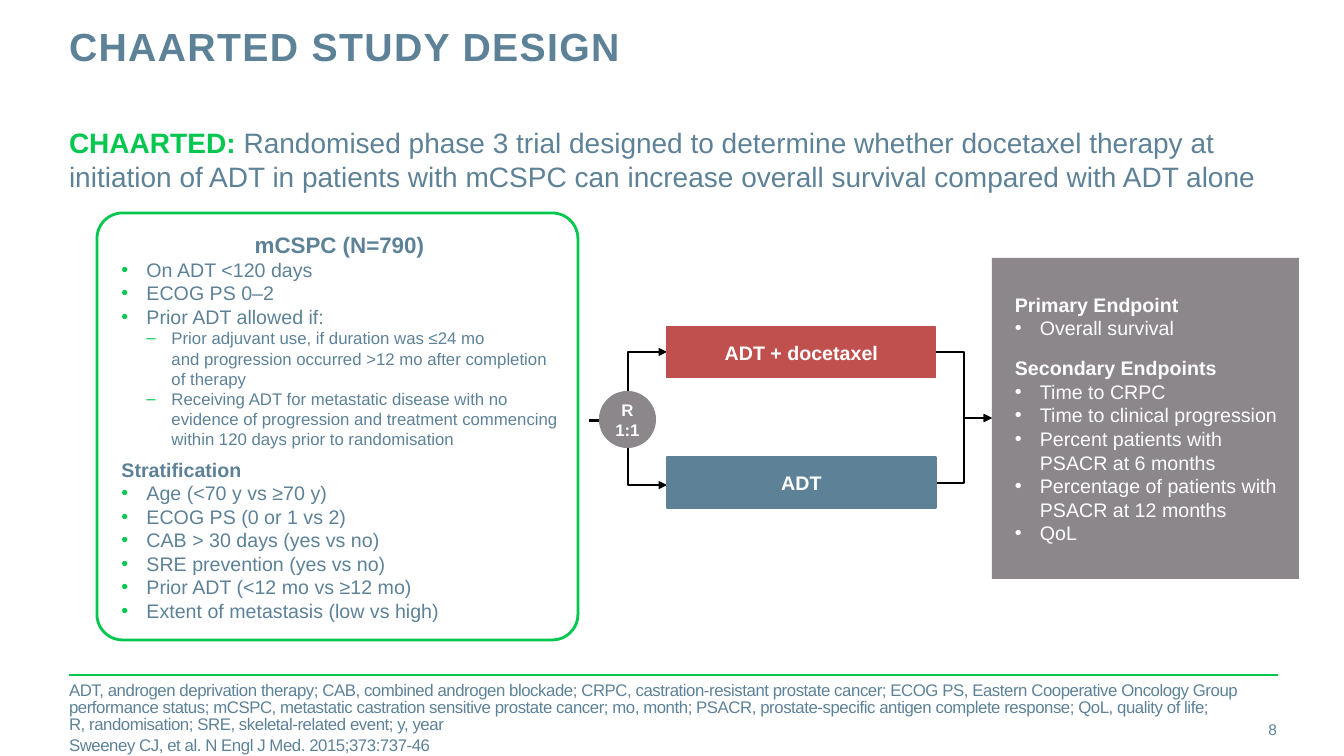
from lxml.etree import SubElement
from pptx import Presentation
from pptx.dml.color import RGBColor
from pptx.enum.shapes import MSO_CONNECTOR as LINK, MSO_SHAPE as SHAPE
from pptx.enum.text import MSO_ANCHOR as ANCHOR, PP_ALIGN as ALIGN
from pptx.oxml.ns import qn
from pptx.util import Emu, Pt

SCALE = 914400 / 100.8  # EMU per px
BLUE = RGBColor(0x5D, 0x82, 0x98)
GREEN = RGBColor(0x03, 0xC7, 0x4F)
RED = RGBColor(0xC0, 0x50, 0x4D)
GRAY = RGBColor(0x8B, 0x87, 0x8B)
WHITE = RGBColor(0xFF, 0xFF, 0xFF)
BLACK = RGBColor(0, 0, 0)


def px(*lengths):
    return [Emu(round(length * SCALE)) for length in lengths]


def write(frame, text, size=14, color=BLUE, bold=False, align=ALIGN.LEFT, indent=0, bullet=None,
          bullet_color=None, before=None, after=None, spacing=None, tracking=None, join=False):
    """Add a paragraph, or with join a span to the last one."""
    para = frame.paragraphs[-1]
    if para.runs and not join:
        para = frame.add_paragraph()
    if not join:
        para.alignment = align
        para.space_before, para.space_after, para.line_spacing = before, after, spacing
        props = para._p.get_or_add_pPr()
        if indent:
            left, hanging = px(indent, -25)
            props.set("marL", str(left))
            props.set("indent", str(hanging))
        if bullet:
            if bullet_color:
                holder = SubElement(props, qn("a:buClr"))
                SubElement(holder, qn("a:srgbClr")).set("val", str(bullet_color))
            SubElement(props, qn("a:buFont")).set("typeface", "Arial")
            SubElement(props, qn("a:buChar")).set("char", bullet)
    for number, line in enumerate(text.split("\n")):
        if number:
            para.add_line_break()
        span = para.add_run()
        span.text = line
        span.font.name, span.font.size = "Arial", Pt(size)
        span.font.bold, span.font.color.rgb = bold, color
        if tracking:
            span._r.get_or_add_rPr().set("spc", str(tracking))


deck = Presentation()
deck.slide_width, deck.slide_height = px(1344, 756)
page = deck.slides.add_slide(deck.slide_layouts[6])
shapes = page.shapes

# Footer rule and trial flow arrows
lines = [
    (LINK.STRAIGHT, 69, 675, 1278, 675, GREEN, 2),
    (LINK.ELBOW, 589, 420, 667, 352, BLACK, 1.5),
    (LINK.ELBOW, 589, 421, 667, 485, BLACK, 1.5),
    (LINK.ELBOW, 936, 352, 992, 418, BLACK, 1.5),
    (LINK.ELBOW, 936, 483, 992, 418, BLACK, 1.5),
]
for kind, x1, y1, x2, y2, color, width in lines:
    link = shapes.add_connector(kind, *px(x1, y1, x2, y2))
    link.line.color.rgb, link.line.width = color, Pt(width)
    SubElement(link._element.spPr, qn("a:effectLst"))
    if kind == LINK.ELBOW:
        SubElement(link.line._get_or_add_ln(), qn("a:tailEnd")).set("type", "triangle")

# Boxes of the trial flow
boxes = {}
for name, kind, bounds, fill, outline, width in [
    ("docetaxel", SHAPE.RECTANGLE, (667, 327, 269, 51), RED, RED, 0.75),
    ("adt", SHAPE.RECTANGLE, (667, 457, 269, 51), BLUE, BLUE, 2),
    ("endpoints", SHAPE.RECTANGLE, (992, 258, 307, 321), GRAY, None, 0),
    ("randomise", SHAPE.OVAL, (600, 392, 55, 55), GRAY, GRAY, 1.5),
    ("cohort", SHAPE.ROUNDED_RECTANGLE, (97, 213, 481, 427), WHITE, GREEN, 2),
]:
    box = shapes.add_shape(kind, *px(*bounds))
    box.shadow.inherit = False
    box.fill.solid()
    box.fill.fore_color.rgb = fill
    if outline is None:
        box.line.fill.background()
    else:
        box.line.color.rgb, box.line.width = outline, Pt(width)
    frame = boxes[name] = box.text_frame
    frame.word_wrap, frame.vertical_anchor = True, ANCHOR.MIDDLE
    if name in ("randomise", "cohort"):
        frame.margin_left = frame.margin_top = frame.margin_right = frame.margin_bottom = 0
    if name == "cohort":
        box.adjustments[0] = 0.06
        frame.margin_left, = px(4)

# Treatment arms and randomisation
for name, label in [("docetaxel", "ADT + docetaxel"), ("adt", "ADT")]:
    write(boxes[name], label, color=WHITE, bold=True, align=ALIGN.CENTER)
for label in ("R", "1:1"):
    write(boxes["randomise"], label, size=12, color=WHITE, bold=True, align=ALIGN.CENTER)

# Endpoints
for heading, before, items in [
    ("Primary Endpoint", None, ["Overall survival"]),
    ("Secondary Endpoints", Pt(12), [
        "Time to CRPC", "Time to clinical progression", "Percent patients with \nPSACR at 6 months",
        "Percentage of patients with PSACR at 12 months", "QoL"]),
]:
    write(boxes["endpoints"], heading, color=WHITE, bold=True, indent=38, before=before)
    for item in items:
        write(boxes["endpoints"], item, color=WHITE, indent=38, bullet="•")

# Cohort: eligibility, then stratification
cohort = boxes["cohort"]
point = dict(indent=38, bullet="•", bullet_color=GREEN)
write(cohort, "mCSPC (N=790)", size=16, bold=True, align=ALIGN.CENTER)
for item in ("On ADT <120 days", "ECOG PS 0–2", "Prior ADT allowed if:"):
    write(cohort, item, **point)
for item in (
    "Prior adjuvant use, if duration was ≤24 mo \n"
    "and progression occurred >12 mo after completion \nof therapy",
    "Receiving ADT for metastatic disease with no evidence of progression "
    "and treatment commencing within 120 days prior to randomisation",
):
    write(cohort, item, size=12, indent=63, bullet="–", bullet_color=GREEN)
write(cohort, "Stratification", bold=True, indent=38, before=Pt(6))
for item in (
    "Age (<70 y vs ≥70 y)", "ECOG PS (0 or 1 vs 2)", "CAB > 30 days (yes vs no)",
    "SRE prevention (yes vs no)", "Prior ADT (<12 mo vs ≥12 mo)",
    "Extent of metastasis (low vs high)",
):
    write(cohort, item, **point)

# Title, summary, footnotes and page number
texts = {}
for name, bounds, anchor in [
    ("title", (69, 27, 964, 89), ANCHOR.TOP),
    ("summary", (69, 126, 1209, 77), ANCHOR.TOP),
    ("footnotes", (69, 699, 1209, 40), ANCHOR.MIDDLE),
    ("number", (1190, 709, 87, 40), ANCHOR.MIDDLE),
]:
    frame = texts[name] = shapes.add_textbox(*px(*bounds)).text_frame
    frame.word_wrap, frame.vertical_anchor = True, anchor
    frame.margin_left = frame.margin_top = frame.margin_right = frame.margin_bottom = 0

write(texts["title"], "CHAARTED STUDY DESIGN", size=28, bold=True, spacing=Pt(30), tracking=100)
write(texts["summary"], "CHAARTED: ", size=20, color=GREEN, bold=True)
write(texts["summary"], "Randomised phase 3 trial designed to determine whether docetaxel therapy at "
      "initiation of ADT in patients with mCSPC can increase overall survival compared with ADT alone",
      size=20, join=True)
for note in (
    "ADT, androgen deprivation therapy; CAB, combined androgen blockade; CRPC, castration-resistant "
    "prostate cancer; ECOG PS, Eastern Cooperative Oncology Group performance status; mCSPC, metastatic "
    "castration sensitive prostate cancer; mo, month; PSACR, prostate-specific antigen complete response; "
    "QoL, quality of life; \nR, randomisation; SRE, skeletal-related event; y, year",
    "Sweeney CJ, et al. N Engl J Med. 2015;373:737-46",
):
    write(texts["footnotes"], note, size=12, spacing=0.85, after=Pt(3), tracking=-30)
write(texts["number"], "8", size=11, align=ALIGN.RIGHT)

deck.save("out.pptx")
